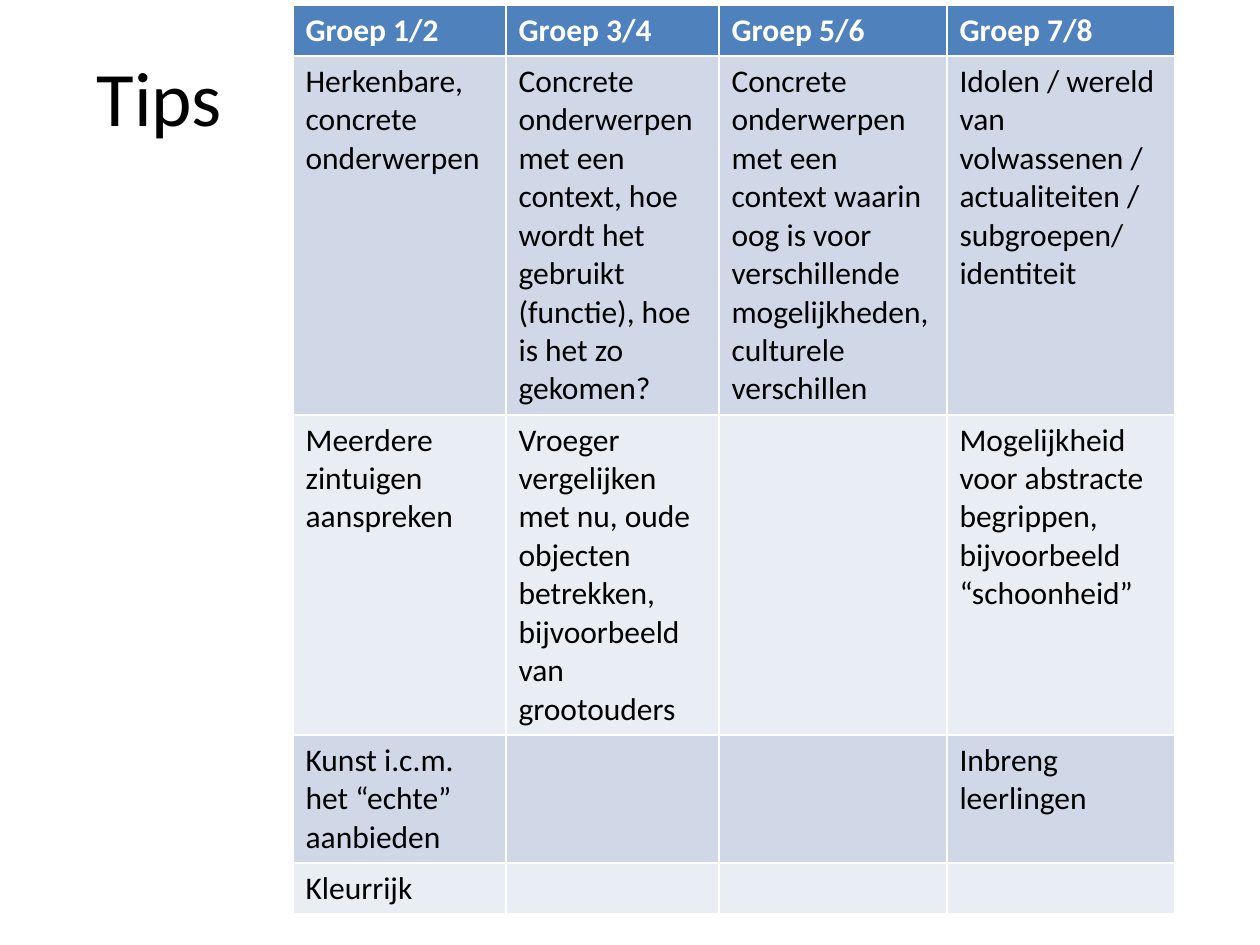
from pptx import Presentation
from pptx import util as u
from pptx.dml.color import RGBColor
from pptx.enum import text

WHITE = RGBColor(0xFF, 0xFF, 0xFF)
BLACK = RGBColor(0, 0, 0)
BLUE = RGBColor(0x4F, 0x81, 0xBD)
BANDS = [RGBColor(0xE9, 0xED, 0xF4), RGBColor(0xD0, 0xD8, 0xE8)]
FONT = "Calibri"

WIDTHS = [213, 213, 228, 228]
HEIGHTS = [51, 358, 320, 128, 51]
ROWS = [
    ["Groep 1/2", "Groep 3/4", "Groep 5/6", "Groep 7/8"],
    ["Herkenbare, concrete onderwerpen",
     "Concrete onderwerpen met een context, hoe wordt het gebruikt "
     "(functie), hoe is het zo gekomen?",
     "Concrete onderwerpen met een context waarin oog is voor "
     "verschillende mogelijkheden, culturele verschillen",
     "Idolen / wereld van volwassenen / actualiteiten / subgroepen/ identiteit"],
    ["Meerdere zintuigen aanspreken",
     "Vroeger vergelijken met nu, oude objecten betrekken, "
     "bijvoorbeeld van grootouders",
     "",
     "Mogelijkheid voor abstracte begrippen, bijvoorbeeld “schoonheid”"],
    ["Kunst i.c.m. het “echte” aanbieden", "", "", "Inbreng leerlingen"],
    ["Kleurrijk", "", "", ""],
]


def px(n):
    return u.Emu(round(n * 914400 / 126))


def style(para, size, color, bold=False):
    font = para.font
    font.name, font.size, font.bold = FONT, u.Pt(size), bold
    font.color.rgb = color


deck = Presentation()
deck.slide_width, deck.slide_height = px(1260), px(945)
slide = deck.slides.add_slide(deck.slide_layouts[0])

# Title; the layout's subtitle is not needed
sub = slide.placeholders[1].element
sub.getparent().remove(sub)
title = slide.shapes.title
title.left, title.top, title.width, title.height = map(px, (84, 26, 1071, 139))
title.text_frame.text = "Tips"
title.text_frame.vertical_anchor = text.MSO_ANCHOR.MIDDLE
head = title.text_frame.paragraphs[0]
head.alignment = text.PP_ALIGN.LEFT
style(head, 44, BLACK)

# Tips per group; white borders come from the default table style
frame = slide.shapes.add_table(len(ROWS), len(WIDTHS), px(293), px(5),
                               px(sum(WIDTHS)), px(sum(HEIGHTS)))
table = frame.table
for col, width in zip(table.columns, WIDTHS):
    col.width = px(width)
for r, (row, height) in enumerate(zip(ROWS, HEIGHTS)):
    table.rows[r].height = px(height)
    for c, words in enumerate(row):
        cell = table.cell(r, c)
        cell.text = words
        cell.fill.solid()
        cell.fill.fore_color.rgb = BANDS[r % 2] if r else BLUE
        style(cell.text_frame.paragraphs[0], 18, BLACK if r else WHITE, r == 0)

deck.save("out.pptx")
